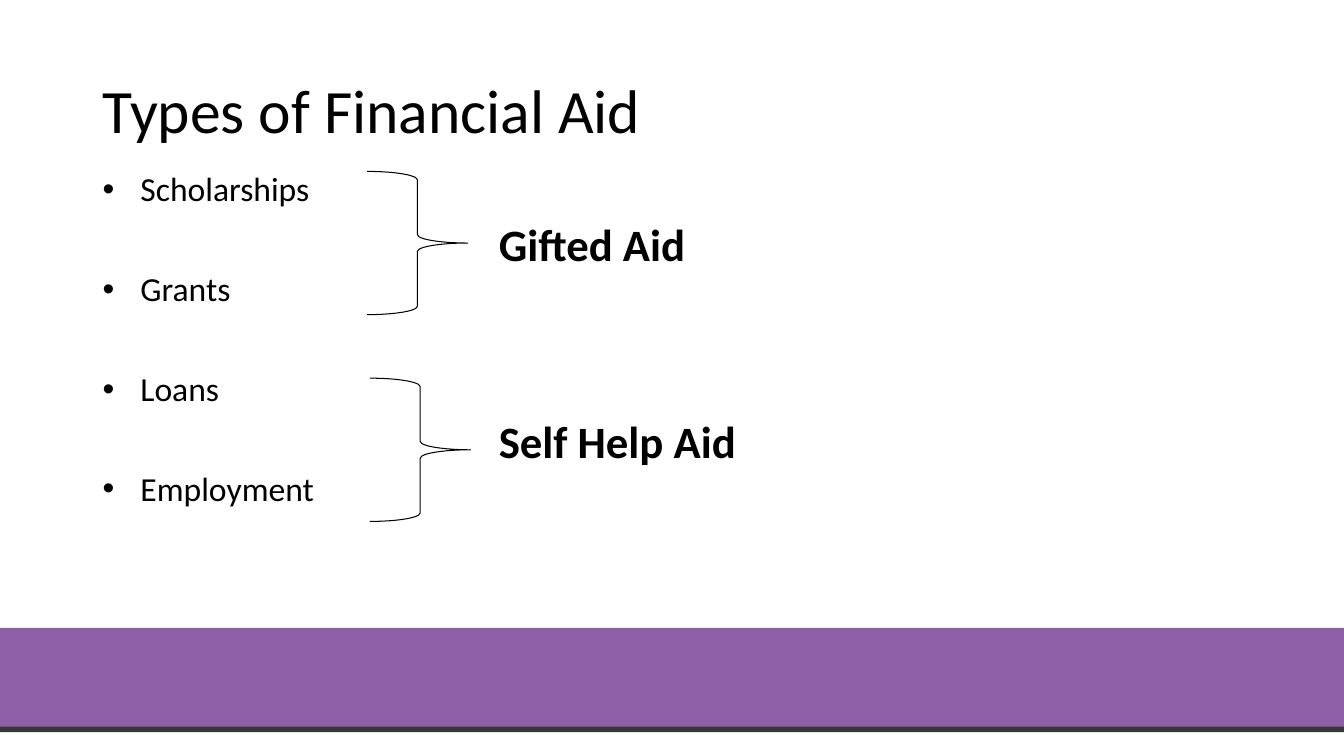
"""Build a slide that groups the types of financial aid."""
from lxml import etree
from pptx import Presentation
from pptx.dml.color import RGBColor
from pptx.enum.shapes import MSO_SHAPE
from pptx.enum.text import MSO_ANCHOR, MSO_AUTO_SIZE, PP_ALIGN
from pptx.oxml.ns import qn
from pptx.util import Cm, Pt

RECTANGLE = MSO_SHAPE.RECTANGLE
RIGHT_BRACE = MSO_SHAPE.RIGHT_BRACE
MIDDLE = MSO_ANCHOR.MIDDLE
NO_AUTOFIT = MSO_AUTO_SIZE.NONE
LEFT = PP_ALIGN.LEFT
TITLE_ONLY = 5

FONT = "Calibri"
BLACK = "000000"
PURPLE = "8E60A8"
AID_TYPES = ["Scholarships", "Grants", "Loans", "Employment"]
AID_GROUPS = [
    ("Gifted Aid", 9.25, 4.32, 5.33),
    ("Self Help Aid", 9.32, 9.53, 10.31),
]


def color(hex_string):
    return RGBColor.from_string(hex_string)


def format_paragraph(paragraph, size, bold=False):
    paragraph.alignment = LEFT
    paragraph.font.name = FONT
    paragraph.font.size = Pt(size)
    paragraph.font.bold = bold
    paragraph.font.color.rgb = color(BLACK)


def add_bullet(paragraph, indent):
    properties = paragraph._p.get_or_add_pPr()
    properties.set("marL", str(indent))
    properties.set("indent", str(-indent))
    etree.SubElement(properties, qn("a:buFont")).set("typeface", "Arial")
    etree.SubElement(properties, qn("a:buChar")).set("char", "•")


def add_text_frame(slide, left, top, width, height):
    text_box = slide.shapes.add_textbox(Cm(left), Cm(top), Cm(width), Cm(height))
    text_box.text_frame.word_wrap = True
    return text_box.text_frame


def add_band(slide, width):
    band = slide.shapes.add_shape(RECTANGLE, 0, Cm(15.82), width, Cm(2.49))
    band.fill.solid()
    band.fill.fore_color.rgb = color(PURPLE)
    band.line.fill.background()
    band.shadow.inherit = False
    effects = band._element.spPr.find(qn("a:effectLst"))
    shadow = etree.SubElement(effects, qn("a:outerShdw"), blurRad="0",
                              dist=str(Pt(4)), dir="5400000", rotWithShape="0")
    shadow_color = etree.SubElement(shadow, qn("a:srgbClr"), val=BLACK)
    etree.SubElement(shadow_color, qn("a:alpha"), val="79000")


def set_title(slide, text):
    title = slide.shapes.title
    title.left, title.top = Cm(2.34), Cm(1.02)
    title.width, title.height = Cm(29.21), Cm(3.68)
    frame = title.text_frame
    frame.text = text
    frame.auto_size = NO_AUTOFIT
    frame.vertical_anchor = MIDDLE
    paragraph = frame.paragraphs[0]
    paragraph.line_spacing = 0.9
    format_paragraph(paragraph, 44)


def add_bullet_list(slide, items):
    frame = add_text_frame(slide, 2.34, 4.22, 29.21, 12.09)
    for index, item in enumerate(items):
        paragraph = frame.add_paragraph() if index else frame.paragraphs[0]
        paragraph.text = item
        paragraph.line_spacing = 0.9
        paragraph.space_before = Pt(45.5 if index else 0)
        add_bullet(paragraph, Cm(0.95))
        format_paragraph(paragraph, 24)


def add_brace(slide, left, top):
    brace = slide.shapes.add_shape(RIGHT_BRACE, Cm(left), Cm(top), Cm(2.54), Cm(3.61))
    brace.fill.background()
    brace.line.color.rgb = color(BLACK)
    brace.line.width = Pt(0.75)
    brace.shadow.inherit = False


def add_label(slide, text, top):
    paragraph = add_text_frame(slide, 12.32, top, 6.83, 1.63).paragraphs[0]
    paragraph.text = text
    format_paragraph(paragraph, 32, bold=True)


def main():
    presentation = Presentation()
    presentation.slide_width = Cm(33.87)
    presentation.slide_height = Cm(19.05)
    slide = presentation.slides.add_slide(presentation.slide_layouts[TITLE_ONLY])
    add_band(slide, presentation.slide_width)
    set_title(slide, "Types of Financial Aid")
    add_bullet_list(slide, AID_TYPES)
    for text, brace_left, brace_top, label_top in AID_GROUPS:
        add_brace(slide, brace_left, brace_top)
        add_label(slide, text, label_top)
    presentation.save("out.pptx")


if __name__ == "__main__":
    main()
